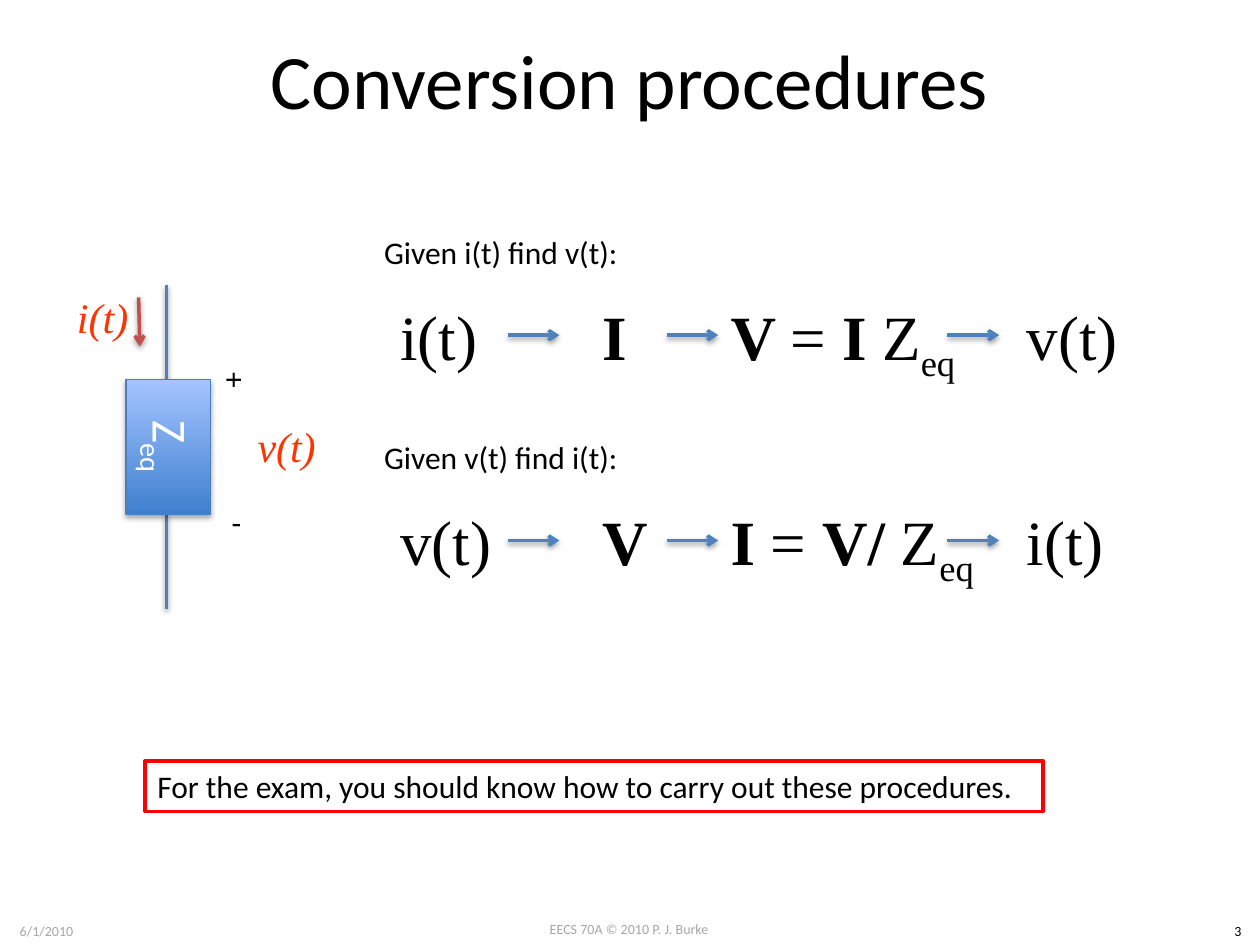
from lxml.etree import SubElement
from pptx import Presentation
from pptx.dml.color import RGBColor
from pptx.enum.shapes import MSO_CONNECTOR, MSO_SHAPE
from pptx.enum.text import MSO_ANCHOR, MSO_AUTO_SIZE, PP_ALIGN
from pptx.oxml.ns import qn
from pptx.util import Emu, Pt

SCALE = 9144  # EMU per px, 100 px to the inch
SANS, SERIF = "Calibri", "Times New Roman"
BLACK, GREY, BLUE, ORANGE = "000000", "A6A6A6", "4F81BD", "FF3300"


def px(length):
    return Emu(length * SCALE)


def color(hex_string):
    return RGBColor.from_string(hex_string)


def write(shape, runs, size, font=SANS, hex_color=BLACK, align=PP_ALIGN.LEFT,
          anchor=MSO_ANCHOR.TOP, wrap=True, grow=True):
    """Fill a shape with (text, style) runs; style: b bold, i italic, s subscript."""
    frame = shape.text_frame
    frame.word_wrap = wrap
    frame.auto_size = MSO_AUTO_SIZE.SHAPE_TO_FIT_TEXT if grow else MSO_AUTO_SIZE.NONE
    frame.vertical_anchor = anchor
    paragraph = frame.paragraphs[0]
    paragraph.alignment = align
    for text, style in runs:
        run = paragraph.add_run()
        run.text = text
        run.font.name = font
        run.font.size = Pt(size)
        run.font.color.rgb = color(hex_color)
        run.font.bold = "b" in style
        run.font.italic = "i" in style
        if "s" in style:
            run.font._element.set("baseline", "-25000")


def add_text(slide, box, runs, size, **options):
    shape = slide.shapes.add_textbox(*map(px, box))
    write(shape, runs, size, **options)
    return shape


def add_shadow(shape, distance, opacity):
    effects = SubElement(shape._element.spPr, qn("a:effectLst"))
    shadow = SubElement(effects, qn("a:outerShdw"), blurRad="40000",
                        dist=str(distance), dir="5400000", rotWithShape="0")
    black = SubElement(shadow, qn("a:srgbClr"), val=BLACK)
    SubElement(black, qn("a:alpha"), val=str(opacity * 1000))


def add_line(slide, start, end, hex_color=BLUE, arrow=False):
    line = slide.shapes.add_connector(MSO_CONNECTOR.STRAIGHT, *map(px, start + end))
    line.line.color.rgb = color(hex_color)
    line.line.width = Pt(2)
    if arrow:
        SubElement(line.line._get_or_add_ln(), qn("a:tailEnd"), type="arrow")
    add_shadow(line, 20000, 38)


def add_title(slide, box, text):
    title = slide.shapes.title
    title.left, title.top, title.width, title.height = map(px, box)
    write(title, [(text, "")], 44, align=PP_ALIGN.CENTER,
          anchor=MSO_ANCHOR.MIDDLE, grow=False)


def add_footer(slide, top):
    for left, width, offset, text, hex_color in (
            (383, 233, 0, "EECS 70A © 2010 P. J. Burke", GREY),
            (0, 74, 1, "6/1/2010", GREY),
            (965, 35, 1, "3", BLACK)):
        add_text(slide, (left, top + offset, width, 24), [(text, "")], 8,
                 hex_color=hex_color, align=PP_ALIGN.CENTER)


def add_procedure(slide, left, top, given, phasor, equation, found):
    """A heading above a chain of four terms joined by arrows."""
    add_text(slide, (left, top, 208, 40), [(f"Given {given} find {found}:", "")],
             18, wrap=False)
    row = top + 51
    for offset, width, runs, wrap in (
            (13, 93, [(given, "")], False),
            (173, 61, [(phasor, "b")], True),
            (275, 235, equation, True),
            (510, 93, [(found, "")], False)):
        add_text(slide, (left + offset, row, width, 71), runs, 36,
                 font=SERIF, wrap=wrap)
    for offset in (108, 234, 457):
        start = left + offset
        add_line(slide, (start, row + 35), (start + 41, row + 35), arrow=True)


def add_impedance(slide, left, top):
    """The circuit element with its wires, current arrow and voltage signs."""
    # Wires above and below
    wire = left + 89
    for offset in (5, 187):
        add_line(slide, (wire, top + offset), (wire, top + offset + 75))

    # Element, turned on its side
    element = slide.shapes.add_shape(
        MSO_SHAPE.RECTANGLE, *map(px, (left + 37, top + 100, 107, 67)))
    element.rotation = 90
    element.fill.gradient()
    element.fill.gradient_angle = 90
    for stop, hex_color in zip(element.fill.gradient_stops, ("3F80CE", "A4C4FF")):
        stop.color.rgb = color(hex_color)
    element._element.spPr.find(qn("a:gradFill")).set("rotWithShape", "0")
    element.line.color.rgb = color("4B7EBC")
    element.line.width = Pt(0.75)
    add_shadow(element, 23000, 35)
    write(element, [("Z", ""), ("eq", "s")], 28, hex_color="FFFFFF",
          align=PP_ALIGN.CENTER, anchor=MSO_ANCHOR.MIDDLE, grow=False)

    # Current arrow and quantities
    add_line(slide, (left + 67, top + 15), (left + 68, top + 54), "C0504D", arrow=True)
    for text, x, y in (("i(t)", 0, 0), ("v(t)", 146, 102)):
        add_text(slide, (left + x, top + y, 77, 61), [(text, "i")], 24, font=SERIF,
                 hex_color=ORANGE, align=PP_ALIGN.CENTER,
                 anchor=MSO_ANCHOR.MIDDLE, grow=False)

    # Polarity signs
    plus = add_text(slide, (left + 128, top + 61, 33, 40), [("+", "")], 18, wrap=False)
    plus.rotation = 90
    add_text(slide, (left + 131, top + 173, 28, 40), [("-", "")], 18, wrap=False)


def add_exam_note(slide, box, text):
    note = slide.shapes.add_shape(MSO_SHAPE.RECTANGLE, *map(px, box))
    note.shadow.inherit = False
    note.fill.background()
    note.line.color.rgb = color("FF0000")
    note.line.width = Pt(2)
    write(note, [(text, "")], 18, wrap=False)


def main():
    presentation = Presentation()
    presentation.slide_width, presentation.slide_height = px(1000), px(750)
    slide = presentation.slides.add_slide(presentation.slide_layouts[5])

    add_footer(slide, 726)
    add_title(slide, (50, 0, 900, 125), "Conversion procedures")
    add_impedance(slide, 43, 221)
    add_procedure(slide, 295, 180, "i(t)", "I",
                  [("V ", "b"), ("= ", ""), ("I ", "b"), ("Z", ""), ("eq", "s")], "v(t)")
    add_procedure(slide, 295, 343, "v(t)", "V",
                  [("I ", "b"), ("= ", ""), ("V/ ", "b"), ("Z", ""), ("eq", "s")], "i(t)")
    add_exam_note(slide, (115, 604, 713, 40),
                  "For the exam, you should know how to carry out these procedures.")

    presentation.save("out.pptx")


if __name__ == "__main__":
    main()
